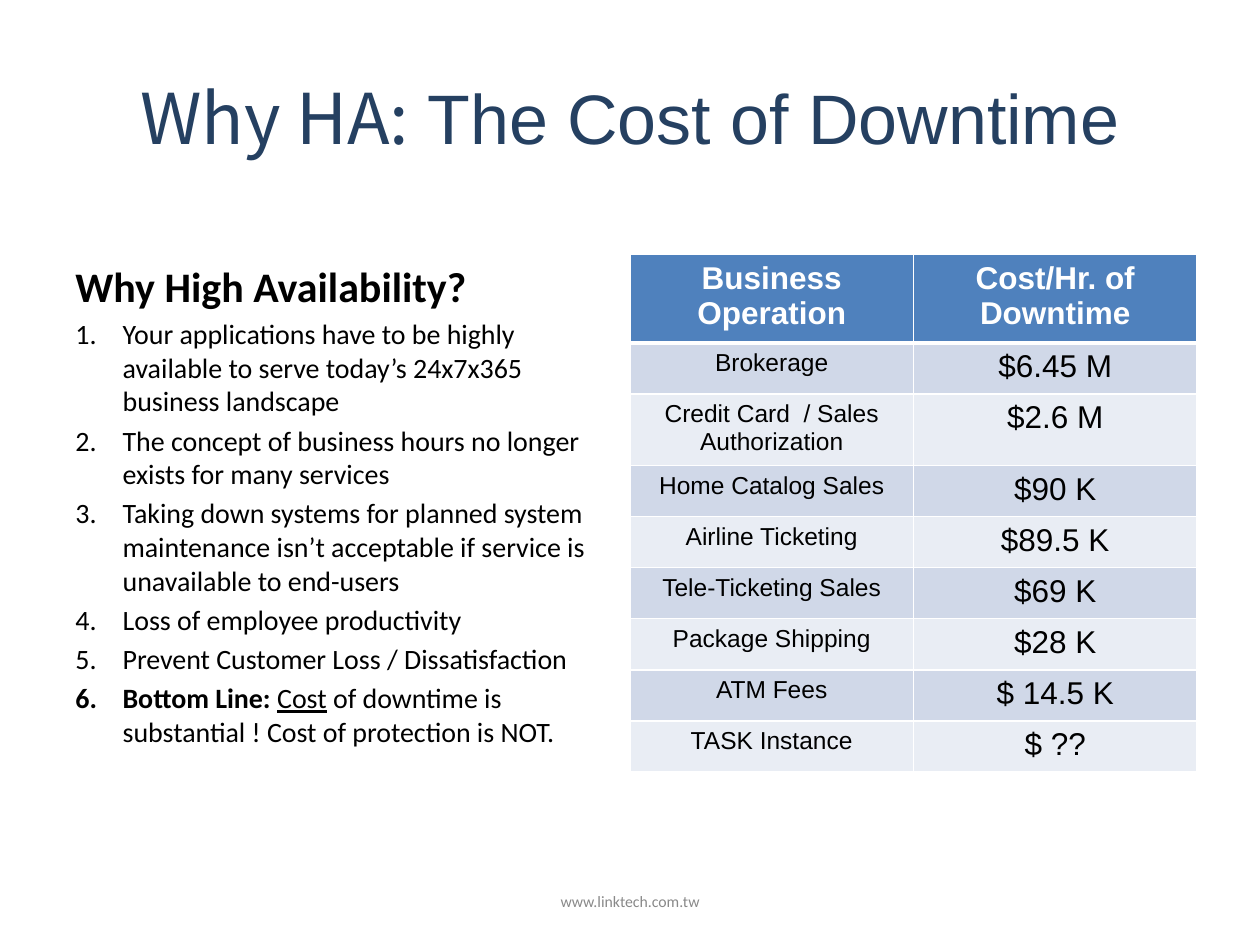
from lxml.etree import SubElement
from pptx import Presentation
from pptx.dml.color import RGBColor
from pptx.enum.text import MSO_ANCHOR, PP_ALIGN
from pptx.oxml.ns import qn
from pptx.util import Pt

HUES = {"navy": "254061", "black": "000000", "gray": "898989", "white": "FFFFFF",
        "head": "4F81BD", "odd": "D0D8E8", "even": "E9EDF4"}

REASONS = [
    [("Your applications have to be highly available to serve today’s 24x7x365 business landscape", {})],
    [("The concept of business hours no longer exists for many services", {})],
    [("Taking down systems for planned system maintenance isn’t acceptable "
      "if service is unavailable to end-users", {})],
    [("Loss of employee productivity", {})],
    [("Prevent Customer Loss / Dissatisfaction", {})],
    [("Bottom Line: ", {"bold": True}), ("Cost", {"underline": True}),
     (" of downtime is substantial ! Cost of protection is NOT.", {})],
]

COSTS = [
    ("Business Operation", "Cost/Hr. of Downtime"),
    ("Brokerage", "$6.45 M"),
    ("Credit Card  / Sales Authorization", "$2.6 M"),
    ("Home Catalog Sales", "$90 K"),
    ("Airline Ticketing", "$89.5 K"),
    ("Tele-Ticketing Sales", "$69 K"),
    ("Package Shipping", "$28 K"),
    ("ATM Fees", "$ 14.5 K"),
    ("TASK Instance", "$ ??"),
]


def rgb(hue):
    return RGBColor.from_string(HUES[hue])


def add_run(para, text, hue, size, **form):
    run = para.add_run()
    run.text = text
    run.font.color.rgb = rgb(hue)
    for key, value in {"size": Pt(size), **form}.items():
        setattr(run.font, key, value)


def place(shape, left, top, width, height):
    spots = {"left": left, "top": top, "width": width, "height": height}
    for key, value in spots.items():
        setattr(shape, key, Pt(value))


def add_box(slide, *spot):
    frame = slide.shapes.add_textbox(*map(Pt, spot)).text_frame
    frame.word_wrap = True
    return frame


def number(para):
    props = para._p.get_or_add_pPr()
    props.set("marL", str(Pt(27)))
    props.set("indent", str(-Pt(27)))
    SubElement(props, qn("a:buFont"), typeface="+mj-lt")
    SubElement(props, qn("a:buAutoNum"), type="arabicPeriod")


def add_title(slide):
    title = slide.shapes.title
    place(title, 36, 21.6, 648, 90)
    frame = title.text_frame
    frame.vertical_anchor = MSO_ANCHOR.MIDDLE
    para = frame.paragraphs[0]
    para.alignment = PP_ALIGN.CENTER
    add_run(para, "Why HA:", "navy", 40, name="Noto Sans CJK JP")
    add_run(para, " The Cost of Downtime", "navy", 40, name="Arial")


def add_list(slide):
    frame = add_box(slide, 36, 145.5, 324, 337)
    add_run(frame.paragraphs[0], "Why High Availability?", "black", 24,
            name="Calibri", bold=True)
    for reason in REASONS:
        para = frame.add_paragraph()
        number(para)
        para.space_before = Pt(3.2)
        for text, form in reason:
            add_run(para, text, "black", 16, name="Calibri", **form)


def edge(cell, side, width):
    line = SubElement(cell._tc.get_or_add_tcPr(), qn(f"a:ln{side}"), w=str(Pt(width)))
    fill = SubElement(line, qn("a:solidFill"))
    SubElement(fill, qn("a:srgbClr"), val=HUES["white"])


def fill_cell(cell, text, row, col):
    head = row == 0
    # Borders come before the fill; the rule below the header is thick
    widths = {"L": 1, "R": 1, "T": 3 if row == 1 else 1, "B": 3 if head else 1}
    for side, width in widths.items():
        edge(cell, side, width)
    cell.fill.solid()
    cell.fill.fore_color.rgb = rgb("head" if head else "odd" if row % 2 else "even")
    para = cell.text_frame.paragraphs[0]
    para.alignment = PP_ALIGN.CENTER
    add_run(para, text, "white" if head else "black", 18 if head or col else 14,
            name="Arial", bold=head)


def add_costs(slide):
    high = 29.2
    spot = map(Pt, (360, 145.5, 324, high * len(COSTS)))
    table = slide.shapes.add_table(len(COSTS), 2, *spot).table
    for row, texts in enumerate(COSTS):
        table.rows[row].height = Pt(high)
        for col, text in enumerate(texts):
            fill_cell(table.cell(row, col), text, row, col)


def add_foot(slide):
    frame = add_box(slide, 246, 500.5, 228, 28.8)
    frame.vertical_anchor = MSO_ANCHOR.MIDDLE
    para = frame.paragraphs[0]
    para.alignment = PP_ALIGN.CENTER
    add_run(para, "www.linktech.com.tw", "gray", 9, name="Calibri")


def main():
    deck = Presentation()
    deck.slide_width, deck.slide_height = Pt(720), Pt(540)
    slide = deck.slides.add_slide(deck.slide_layouts[5])
    add_title(slide)
    add_list(slide)
    add_foot(slide)
    add_costs(slide)
    deck.save("out.pptx")


if __name__ == "__main__":
    main()
